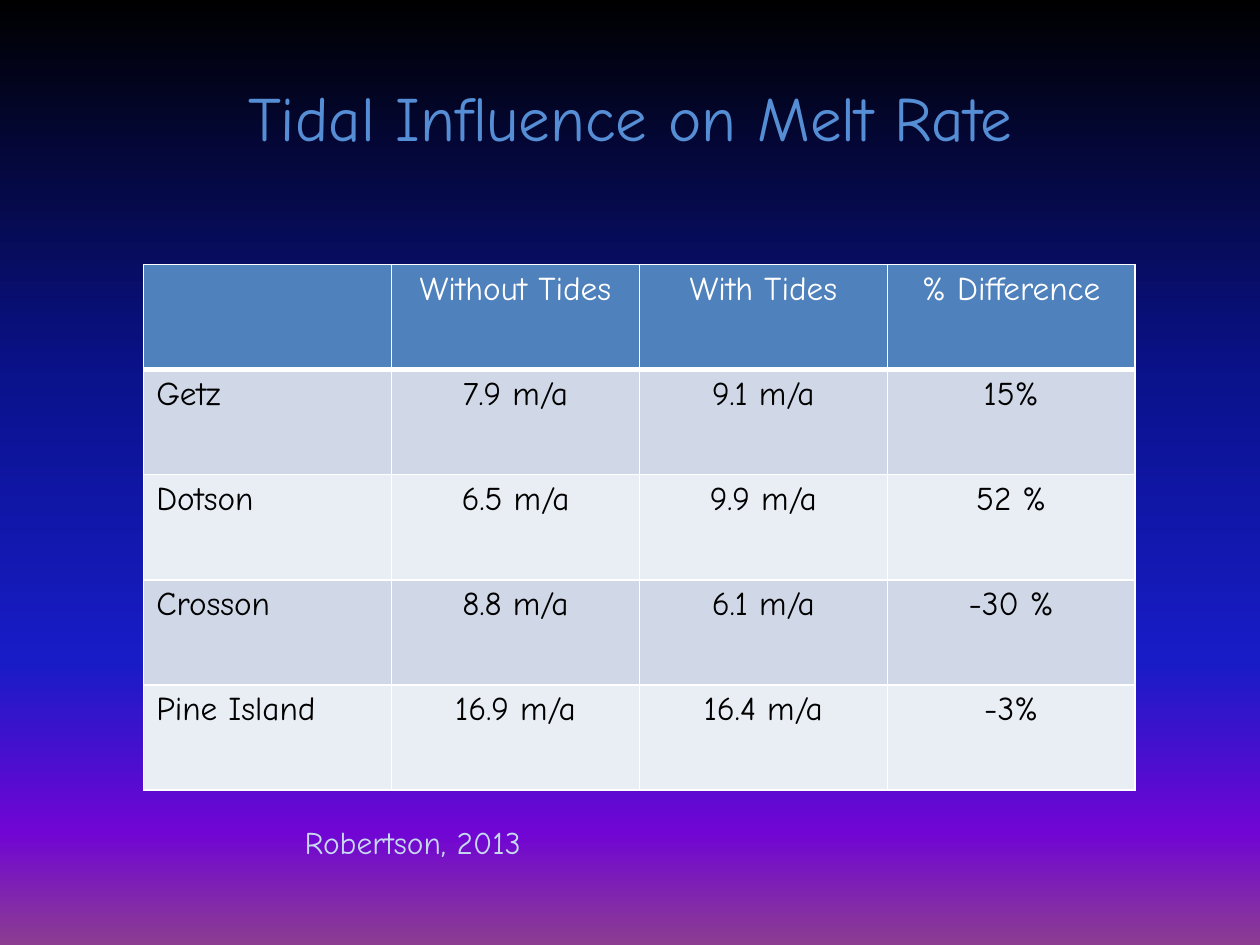
import pptx
import pptx.dml.color
import pptx.enum.text
import pptx.oxml
import pptx.oxml.ns
import pptx.util
from lxml import etree

RGB = pptx.dml.color.RGBColor
ALIGN = pptx.enum.text.PP_ALIGN
ANCHOR = pptx.enum.text.MSO_ANCHOR
qn = pptx.oxml.ns.qn

WIDTH, HEIGHT = pptx.util.Inches(10), pptx.util.Inches(7.5)
FONT = "Comic Neue"

WHITE = RGB(0xFF, 0xFF, 0xFF)
BLACK = RGB(0x00, 0x00, 0x00)
TITLE_BLUE = RGB(0x55, 0x8E, 0xD5)
CITATION_BLUE = RGB(0xC6, 0xD9, 0xF1)
HEADER_BLUE = RGB(0x4F, 0x81, 0xBD)
BANDS = RGB(0xD0, 0xD8, 0xE8), RGB(0xE9, 0xED, 0xF4)
SKY = {
    0: BLACK,
    40: RGB(0x0A, 0x12, 0x8C),
    70: RGB(0x18, 0x1C, 0xC7),
    88: RGB(0x70, 0x05, 0xD4),
    100: RGB(0x8C, 0x3D, 0x91),
}

MELT_RATES = [
    ["", "Without Tides", "With Tides", "% Difference"],
    ["Getz", "7.9 m/a", "9.1 m/a", "15%"],
    ["Dotson", "6.5 m/a", "9.9 m/a", "52 %"],
    ["Crosson", "8.8 m/a", "6.1 m/a", "-30 %"],
    ["Pine Island", "16.9 m/a", "16.4 m/a", "-3%"],
]


def share(left, top, width, height):
    return (round(left * WIDTH), round(top * HEIGHT),
            round(width * WIDTH), round(height * HEIGHT))


def add_color(parent, color):
    etree.SubElement(parent, qn("a:srgbClr"), val=str(color))


def paint_background(slide):
    fill = slide.background.fill
    fill.gradient()
    fill.gradient_angle = 270
    stops = next(slide.element.iter(qn("a:gsLst")))
    for stop in list(stops):
        stops.remove(stop)
    for percent, color in SKY.items():
        add_color(etree.SubElement(stops, qn("a:gs"), pos=str(percent * 1000)), color)


def write(frame, text, size, color, align):
    paragraph = frame.paragraphs[0]
    paragraph.alignment = align
    if not text:
        return
    run = paragraph.add_run()
    run.text = text
    run.font.color.rgb = color
    for name, value in {"name": FONT, "size": pptx.util.Pt(size)}.items():
        setattr(run.font, name, value)


def add_label(slide, box, text, size, color, align, anchor):
    frame = slide.shapes.add_textbox(*share(*box)).text_frame
    for name, value in {"word_wrap": True, "vertical_anchor": anchor}.items():
        setattr(frame, name, value)
    write(frame, text, size, color, align)


def add_borders(cell, bottom):
    properties = cell._tc.get_or_add_tcPr()
    for side, points in {"L": 1, "R": 1, "T": 1, "B": bottom}.items():
        line = etree.SubElement(properties, qn(f"a:ln{side}"),
                                w=str(pptx.util.Pt(points)))
        add_color(etree.SubElement(line, qn("a:solidFill")), WHITE)


def add_rate_table(slide, box, rates):
    table = slide.shapes.add_table(len(rates), len(rates[0]), *share(*box)).table
    for row, values in enumerate(rates):
        header = row == 0
        for column, value in enumerate(values):
            cell = table.cell(row, column)
            add_borders(cell, 3 if header else 1)
            cell.fill.solid()
            cell.fill.fore_color.rgb = HEADER_BLUE if header else BANDS[(row - 1) % 2]
            write(cell.text_frame, value, 19, WHITE if header else BLACK,
                  ALIGN.CENTER if column else ALIGN.LEFT)


def main():
    deck = pptx.Presentation()
    for name, value in {"slide_width": WIDTH, "slide_height": HEIGHT}.items():
        setattr(deck, name, value)
    slide = deck.slides.add_slide(deck.slide_layouts[6])
    paint_background(slide)
    add_label(slide, (0.05, 0.04, 0.9, 1 / 6), "Tidal Influence on Melt Rate",
              36, TITLE_BLUE, ALIGN.CENTER, ANCHOR.MIDDLE)
    add_rate_table(slide, (0.114, 0.28, 0.787, 0.556), MELT_RATES)
    add_label(slide, (0.232, 0.864, 0.417, 0.053), "Robertson, 2013",
              18, CITATION_BLUE, ALIGN.LEFT, ANCHOR.TOP)
    deck.save("out.pptx")


if __name__ == "__main__":
    main()
